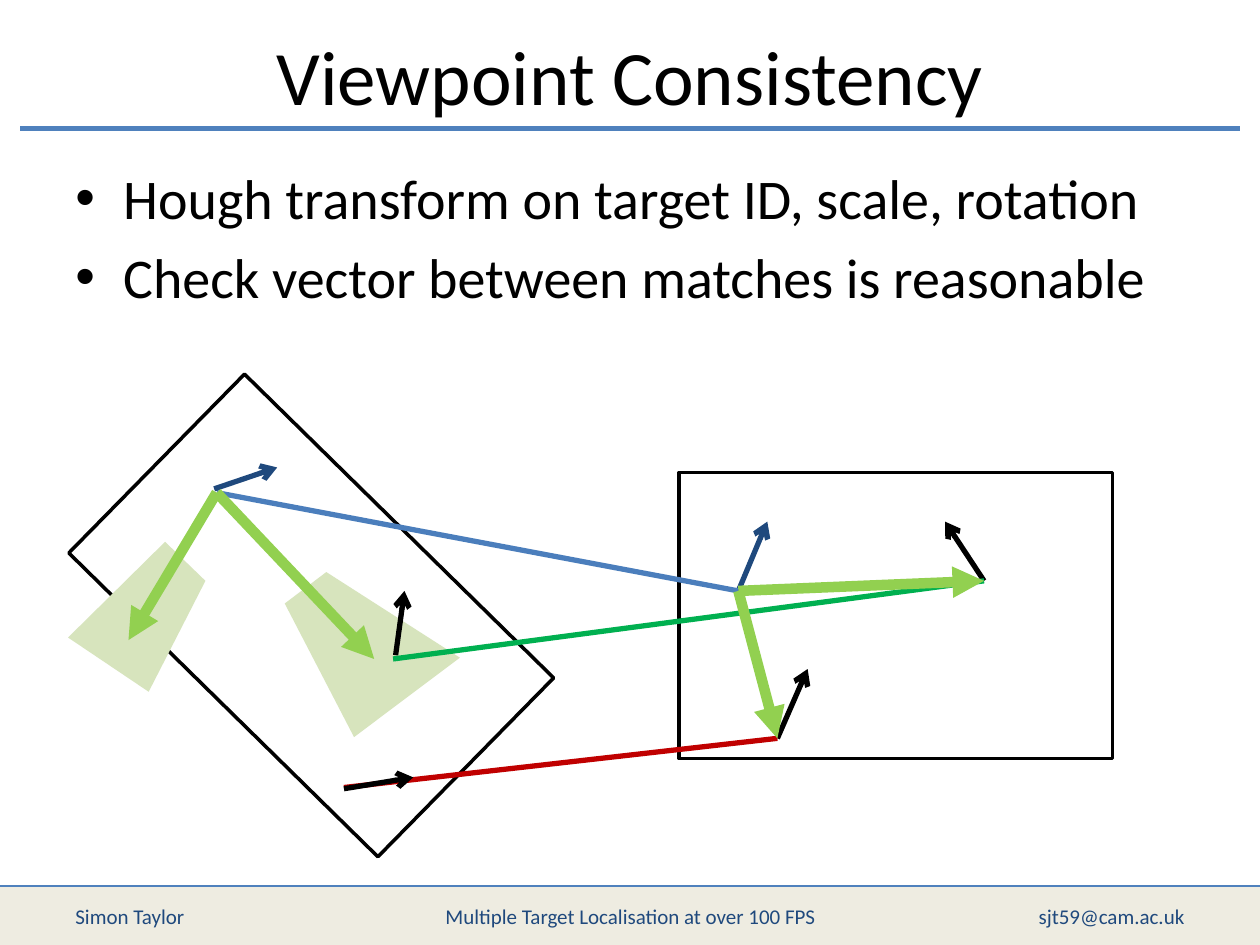
"""Build the Viewpoint Consistency slide: two target views with matched features."""
import pptx
import pptx.util
import pptx.dml.color
import pptx.enum.shapes
import pptx.enum.text
import pptx.oxml.ns
import lxml.etree

WIDTH, HEIGHT = 10, 7.5
MARGIN = 0.05 * WIDTH
FOOTER_TOP = 7.03
BLACK, WHITE, NAVY, BLUE = "000000", "FFFFFF", "1F497D", "4F81BD"
LIME, PALE_GREEN = "92D050", "D7E4BD"

TITLE = "Viewpoint Consistency"
BULLETS = [
    "Hough transform on target ID, scale, rotation",
    "Check vector between matches is reasonable",
]
FOOTERS = [
    ("Simon Taylor", MARGIN, 2.33, "LEFT"),
    ("Multiple Target Localisation at over 100 FPS", 3.42, 3.17, "CENTER"),
    ("sjt59@cam.ac.uk", WIDTH - MARGIN - 2.33, 2.33, "RIGHT"),
]
VIEWS = [(0.75, 3.89, 3.44, 1.99, 44.5), (5.39, 3.75, 3.44, 2.27, 0)]
SEARCH_REGIONS = [
    [(1.31, 4.3), (1.63, 4.61), (1.18, 5.49), (0.54, 5.06)],
    [(2.26, 4.79), (2.59, 4.54), (3.65, 5.22), (2.81, 5.85)],
]
LEFT_ANCHOR, RIGHT_ANCHOR = (1.72, 3.91), (5.86, 4.69)
RIGHT_SIDE, RIGHT_LOW = (7.81, 4.61), (6.17, 5.86)
RULES = [
    ((0, FOOTER_TOP), (WIDTH, FOOTER_TOP), BLUE, 1, None),
    ((0.16, 1.02), (WIDTH - 0.16, 1.02), BLUE, 3, None),
]
VECTORS = [
    (RIGHT_ANCHOR, (6.09, 4.14), NAVY, 3, "arrow"),
    (RIGHT_SIDE, (7.5, 4.14), BLACK, 3, "arrow"),
    (RIGHT_LOW, (6.41, 5.31), BLACK, 3, "arrow"),
    ((3.14, 5.2), (3.21, 4.69), BLACK, 3, "arrow"),
    (LEFT_ANCHOR, RIGHT_ANCHOR, "4B7EBC", 3, None),
    ((2.73, 6.25), RIGHT_LOW, "C00000", 3, None),
    ((1.7, 3.88), (2.2, 3.71), NAVY, 3, "arrow"),
    (LEFT_ANCHOR, (2.97, 5.23), LIME, 6, "triangle"),
    ((3.12, 5.23), RIGHT_SIDE, "00B050", 3, None),
    (RIGHT_ANCHOR, RIGHT_SIDE, LIME, 6, "triangle"),
    (RIGHT_ANCHOR, RIGHT_LOW, LIME, 6, "triangle"),
    (LEFT_ANCHOR, (1.02, 5.08), LIME, 6, "triangle"),
    ((2.73, 6.26), (3.28, 6.17), BLACK, 3, "arrow"),
]


def color(hex_text):
    return pptx.dml.color.RGBColor.from_string(hex_text)


def inches(values):
    return [pptx.util.Inches(value) for value in values]


def add_child(parent, tag, **attributes):
    return lxml.etree.SubElement(parent, pptx.oxml.ns.qn(tag), attributes)


def paint(shape, fill, line=None):
    shape.shadow.inherit = False
    shape.fill.solid()
    shape.fill.fore_color.rgb = color(fill)
    if line:
        shape.line.color.rgb = color(line)
        shape.line.width = pptx.util.Pt(2)
    else:
        shape.line.fill.background()


def add_rectangle(slide, box, fill, line=None, rotation=0):
    kind = pptx.enum.shapes.MSO_SHAPE.RECTANGLE
    shape = slide.shapes.add_shape(kind, *inches(box))
    shape.rotation = rotation
    paint(shape, fill, line)


def add_region(slide, points):
    start, *others = [inches(point) for point in points]
    builder = slide.shapes.build_freeform(*start)
    builder.add_line_segments(others, close=True)
    paint(builder.convert_to_shape(), PALE_GREEN)


def add_line(slide, start, end, line_color, width, head):
    kind = pptx.enum.shapes.MSO_CONNECTOR.STRAIGHT
    connector = slide.shapes.add_connector(kind, *inches(start + end))
    connector.line.color.rgb = color(line_color)
    connector.line.width = pptx.util.Pt(width)
    if head:
        add_child(connector.line._get_or_add_ln(), "a:tailEnd", type=head)
    add_child(connector._element.spPr, "a:effectLst")


def add_text(slide, text, box, size, text_color=BLACK, align="LEFT", anchor="MIDDLE", bullet=False):
    frame = slide.shapes.add_textbox(*inches(box)).text_frame
    frame.word_wrap = True
    frame.vertical_anchor = getattr(pptx.enum.text.MSO_ANCHOR, anchor)
    frame.text = text
    for paragraph in frame.paragraphs:
        paragraph.alignment = getattr(pptx.enum.text.PP_ALIGN, align)
        font = paragraph.runs[0].font
        font.name, font.size = "Calibri", pptx.util.Pt(size)
        font.color.rgb = color(text_color)
        if bullet:
            paragraph.space_before = pptx.util.Pt(0.2 * size)
            properties = paragraph._p.get_or_add_pPr()
            indent = pptx.util.Inches(0.38)
            properties.set("marL", str(indent))
            properties.set("indent", str(-indent))
            add_child(properties, "a:buFont", typeface="Arial")
            add_child(properties, "a:buChar", char="•")


def main():
    presentation = pptx.Presentation()
    presentation.slide_width, presentation.slide_height = inches((WIDTH, HEIGHT))
    slide = presentation.slides.add_slide(presentation.slide_layouts[6])

    add_rectangle(slide, (0, FOOTER_TOP, WIDTH, HEIGHT - FOOTER_TOP), "EEECE1")
    for rule in RULES:
        add_line(slide, *rule)
    for (*box, rotation), region in zip(VIEWS, SEARCH_REGIONS):
        add_rectangle(slide, box, WHITE, BLACK, rotation)
        add_region(slide, region)

    content_width = WIDTH - 2 * MARGIN
    add_text(slide, TITLE, (MARGIN, 0.16, content_width, 0.87), 44, align="CENTER")
    add_text(slide, "\n".join(BULLETS), (MARGIN, 1.25, content_width, 5.63), 32,
             anchor="TOP", bullet=True)
    for text, left, width, align in FOOTERS:
        add_text(slide, text, (left, 7.07, width, 0.4), 12, text_color=NAVY, align=align)

    for vector in VECTORS:
        add_line(slide, *vector)
    presentation.save("out.pptx")


if __name__ == "__main__":
    main()
